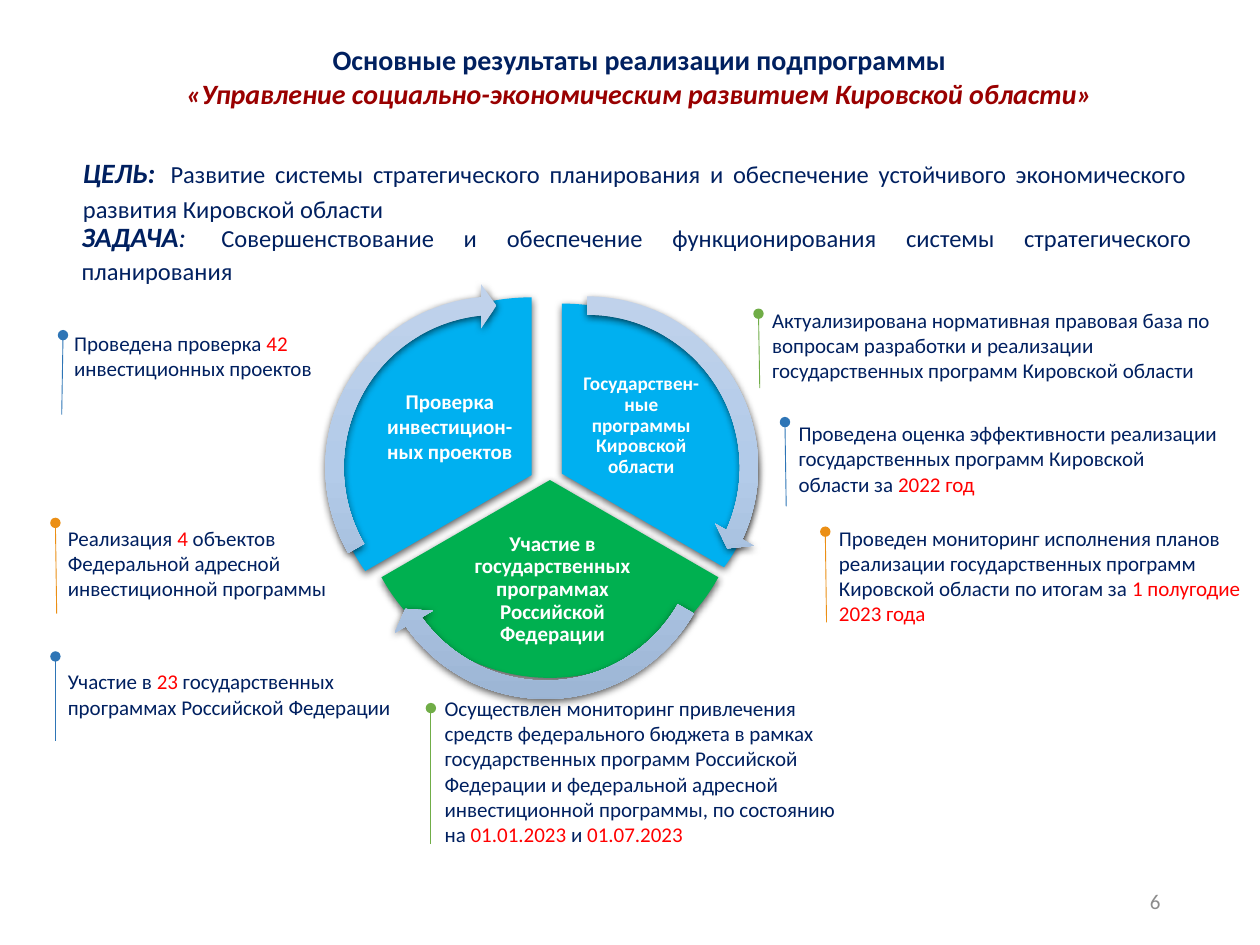
from copy import deepcopy

from lxml.etree import SubElement
from pptx import Presentation
from pptx.dml.color import RGBColor
from pptx.enum.shapes import MSO_CONNECTOR, MSO_SHAPE
from pptx.enum.text import MSO_ANCHOR, MSO_AUTO_SIZE, PP_ALIGN
from pptx.oxml.ns import qn
from pptx.util import Emu, Pt

SCALE = 9144  # EMU in one px, 100 px to the inch
FONT = "Calibri"
NAVY, RED, MAROON, WHITE, GREY = "002060", "FF0000", "990000", "FFFFFF", "8C8C8C"
SKY, GREEN = "00B0F0", "00B050"
LEAF, BLUE, ORANGE = "70AD47", "2E75B6", "EB8F15"
ARROW_STOPS = [(0, "C0D2EB"), (0.5, "B3CBE9"), (1, "9BB4D3")]

# Text box, pin top and pin bottom relative to it, pin colour, text with |red| parts
CALLOUTS = [
    ((603, 239, 394, 71), (-1, 10), (0, 69), LEAF,
     "Актуализирована нормативная правовая база по вопросам разработки и реализации "
     "государственных программ Кировской области"),
    ((624, 329, 353, 71), (-1, 6), (0, 73), BLUE,
     "Проведена оценка эффективности реализации государственных программ Кировской "
     "области за |2022 год"),
    ((656, 412, 341, 91), (-1, 10), (0, 82), ORANGE,
     "Проведен мониторинг исполнения планов реализации государственных программ "
     "Кировской области по итогам за |1 полугодие 2023 года"),
    ((343, 547, 332, 151), (-1, 15), (-1, 123), LEAF,
     "Осуществлен мониторинг привлечения средств федерального бюджета в рамках "
     "государственных программ Российской Федерации и федеральной адресной "
     "инвестиционной программы, по состоянию на |01.01.2023| и |01.07.2023"),
    ((49, 257, 219, 71), (1, 9), (0, 72), BLUE,
     "Проведена проверка |42 |инвестиционных проектов"),
    ((44, 526, 314, 50), (0, -5), (0, 62), BLUE,
     "Участие в |23| государственных программах Российской Федерации"),
    ((44, 412, 241, 91), (0, 3), (1, 75), ORANGE,
     "Реализация |4 |объектов Федеральной адресной инвестиционной программы"),
]

# Pie box, start and end angle, colour, label box, label size, line spacing, label
SECTORS = [
    ((44, 17, 308, 270), (162, 18), SKY, (206, 74, 110, 80), 11, 0.9,
     "Государствен-ные программы Кировской области"),
    ((35, 0, 307, 314), (18, 90), GREEN, (108, 203, 165, 82), 12, 0.9,
     "Участие в государственных программах Российской Федерации"),
    ((17, 12, 314, 282), (90, 162), SKY, (53, 72, 112, 84), 12, 1.0,
     "Проверка инвестицион-ных проектов"),
]
# Left, top, head angle, start angle
ARROWS = [(72, 1, 14.72, 161.99), (39, 49, 86.72, 18), (0, 1, 158.73, 90)]
ARROW_SIZE = 292


def px(*values):
    return [Emu(value * SCALE) for value in values]


def color(hex_value):
    return RGBColor.from_string(hex_value)


def within(outer, inner):
    return (outer[0] + inner[0], outer[1] + inner[1], *inner[2:])


def add_spans(para, spans):
    """Add (text, font format) pairs; a text of None is a line break."""
    for text, style in spans:
        if text is None:
            para.add_line_break()
            continue
        span = para.add_run()
        span.text = text
        span.font.name = FONT
        span.font.color.rgb = color(style.get("color", NAVY))
        for name in ("size", "bold", "italic"):
            if name in style:
                value = style[name]
                setattr(span.font, name, Pt(value) if name == "size" else value)


def write(shape, spans, align=PP_ALIGN.LEFT, spacing=None, **frame_format):
    frame = shape.text_frame
    defaults = {"word_wrap": True, "auto_size": MSO_AUTO_SIZE.NONE,
                "vertical_anchor": MSO_ANCHOR.TOP}
    for name, value in {**defaults, **frame_format}.items():
        setattr(frame, name, value)
    para = frame.paragraphs[0]
    para.alignment = align
    if spacing:
        para.line_spacing = spacing
    add_spans(para, spans)


def add_text(shapes, box, spans, **options):
    write(shapes.add_textbox(*px(*box)), spans, **options)


def add_title(page, box):
    title = page.shapes.title
    title.left, title.top, title.width, title.height = px(*box)
    heading = {"size": 16, "bold": True}
    write(title, [
        ("Основные результаты реализации подпрограммы", heading),
        (None, {}),
        ("«Управление социально-экономическим развитием Кировской области»",
         {**heading, "color": MAROON, "italic": True}),
    ], align=PP_ALIGN.CENTER)


def add_statement(page, box, lead, text, spacing=None):
    strong = {"size": 16, "bold": True, "italic": True}
    add_text(page.shapes, box, [
        (lead, strong),
        (":", {**strong, "bold": spacing is None}),
        (" ", {"size": 28, "italic": True}),
        (text, {"size": 14}),
    ], align=PP_ALIGN.JUSTIFY, spacing=spacing)


def add_callout(page, box, top, bottom, pin_color, text):
    spans = [(part, {"size": 12, "color": RED if index % 2 else NAVY})
             for index, part in enumerate(text.split("|"))]
    add_text(page.shapes, box, spans)
    ends = within(box, bottom) + within(box, top)
    pin = page.shapes.add_connector(MSO_CONNECTOR.STRAIGHT, *px(*ends))
    pin.line.color.rgb = color(pin_color)
    pin.line.width = Pt(0.5)
    SubElement(pin.line._get_or_add_ln(), qn("a:tailEnd"), type="oval")
    SubElement(pin._element.spPr, qn("a:effectLst"))


def add_shadow(shape):
    effects = SubElement(shape._element.spPr, qn("a:effectLst"))
    shadow = SubElement(effects, qn("a:outerShdw"), blurRad=str(Pt(4.5)),
                        dist=str(Pt(1.5)), dir="5400000", rotWithShape="0")
    tone = SubElement(shadow, qn("a:srgbClr"), val="000000")
    SubElement(tone, qn("a:alpha"), val="63000")


def add_wheel_part(shapes, kind, box, adjustments):
    shape = shapes.add_shape(kind, *px(*box))
    for index, value in enumerate(adjustments):
        shape.adjustments[index] = value
    shape.line.fill.background()
    return shape


def fill_arrow(arrow):
    fill = arrow.fill
    fill.gradient()
    fill.gradient_angle = 270
    stop_list = arrow._element.spPr.find(qn("a:gradFill")).find(qn("a:gsLst"))
    stop_list.insert(1, deepcopy(stop_list[0]))
    for stop, (position, hex_value) in zip(fill.gradient_stops, ARROW_STOPS):
        stop.position = position
        stop.color.rgb = color(hex_value)


def add_wheel(page, box):
    shapes = page.shapes.add_group_shape().shapes
    margins = dict.fromkeys(
        ("margin_left", "margin_top", "margin_right", "margin_bottom"), px(2)[0])
    for pie_box, angles, hex_value, label_box, size, spacing, label in SECTORS:
        pie = add_wheel_part(shapes, MSO_SHAPE.PIE, within(box, pie_box), angles)
        pie.fill.solid()
        pie.fill.fore_color.rgb = color(hex_value)
        add_shadow(pie)
        add_text(shapes, within(box, label_box),
                 [(label, {"size": size, "bold": True, "color": WHITE})],
                 align=PP_ALIGN.CENTER, spacing=spacing,
                 vertical_anchor=MSO_ANCHOR.MIDDLE, **margins)
    for left, top, head, start in ARROWS:
        arrow_box = within(box, (left, top, ARROW_SIZE, ARROW_SIZE))
        arrow = add_wheel_part(shapes, MSO_SHAPE.CIRCULAR_ARROW, arrow_box,
                               (0.05, 3.28, head, start, 0.06))
        fill_arrow(arrow)
        add_shadow(arrow)


def main():
    deck = Presentation()
    deck.slide_width, deck.slide_height = px(1000, 750)
    page = deck.slides.add_slide(deck.slide_layouts[5])
    add_title(page, (60, 29, 895, 64))
    add_statement(page, (56, 102, 896, 81), "ЦЕЛЬ",
                  "Развитие системы стратегического планирования и обеспечение "
                  "устойчивого экономического развития Кировской области")
    add_statement(page, (55, 177, 901, 55), "ЗАДАЧА",
                  "Совершенствование и обеспечение функционирования системы "
                  "стратегического планирования", spacing=Pt(16))
    for callout in CALLOUTS:
        add_callout(page, *callout)
    add_wheel(page, (248, 224, 364, 341))
    add_text(page.shapes, (706, 695, 225, 40), [("6", {"size": 12, "color": GREY})],
             align=PP_ALIGN.RIGHT, vertical_anchor=MSO_ANCHOR.MIDDLE)
    deck.save("out.pptx")


if __name__ == "__main__":
    main()
